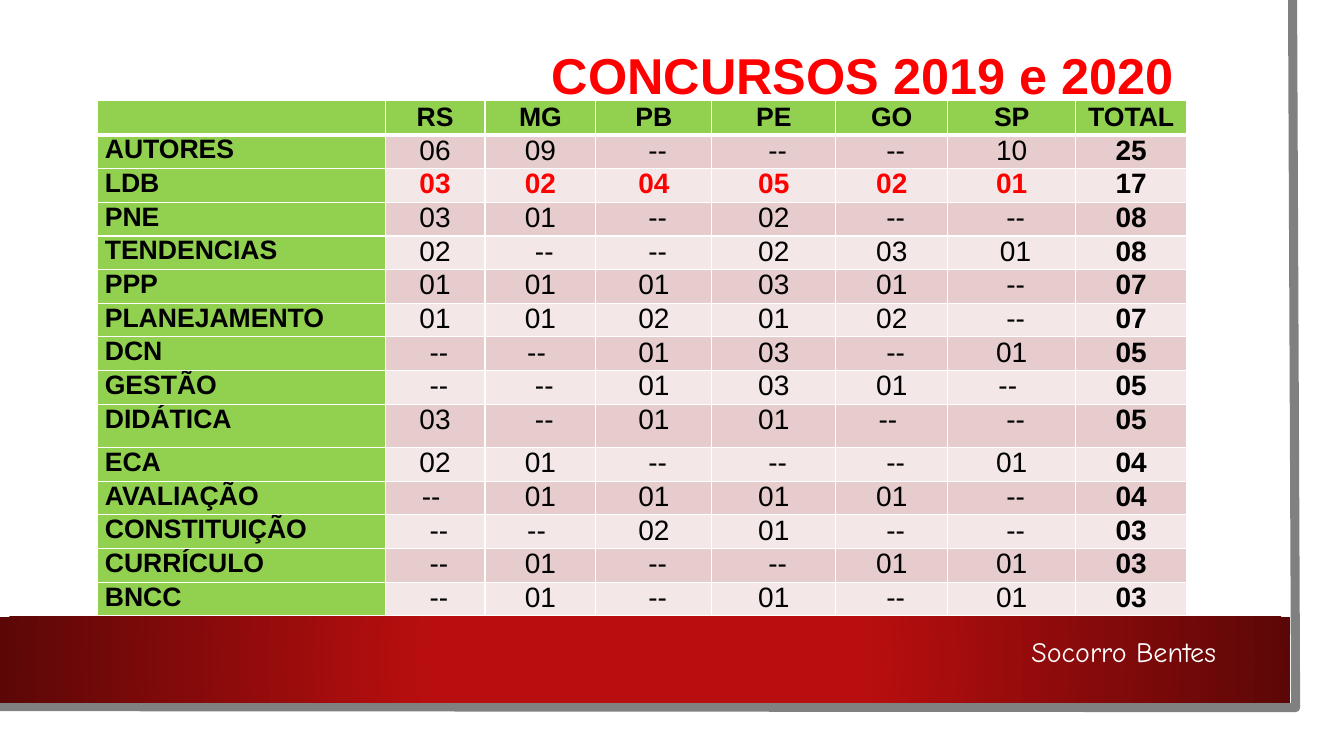
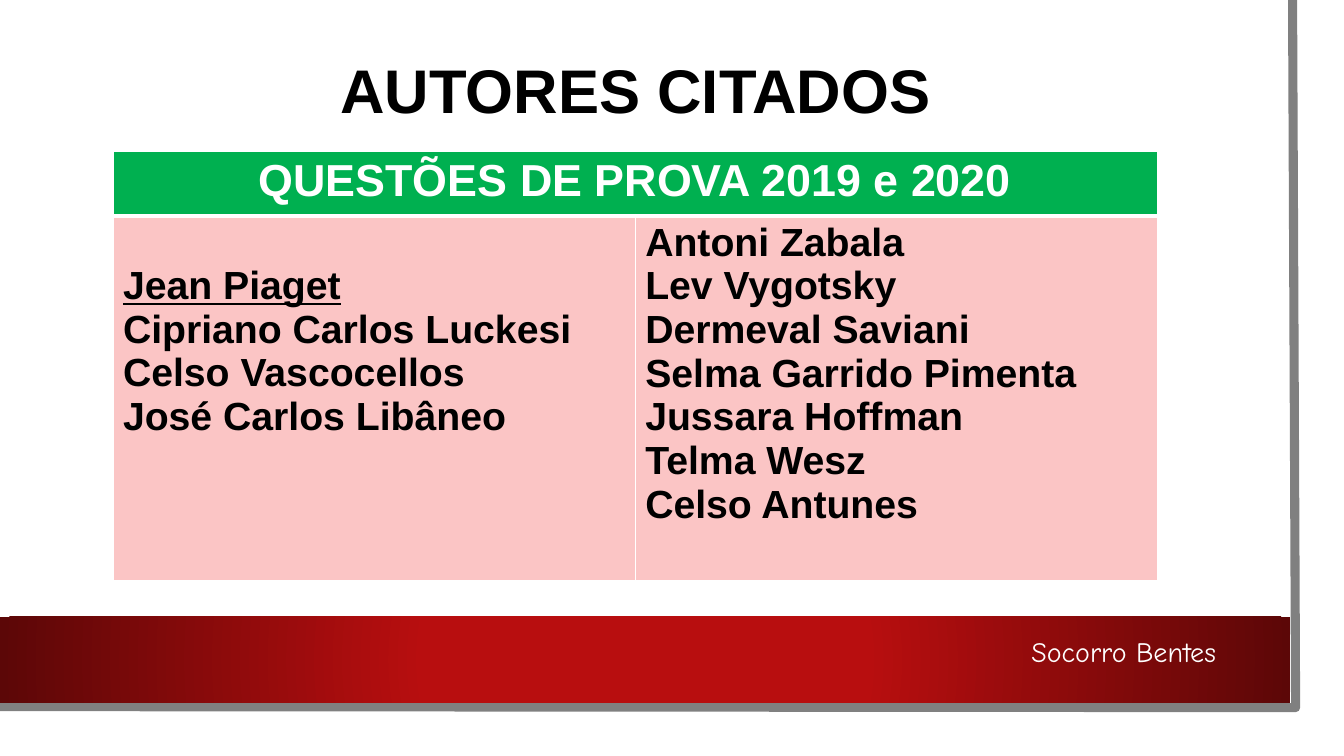
from lxml.etree import SubElement
from pptx import Presentation
from pptx.dml.color import RGBColor
from pptx.enum.shapes import MSO_SHAPE
from pptx.enum.text import MSO_AUTO_SIZE, PP_ALIGN
from pptx.oxml import parse_xml
from pptx.oxml.ns import qn
from pptx.util import Inches, Pt

COLORS = {
    "white": "FFFFFF",
    "black": "000000",
    "red": "FF0000",
    "edge": "808080",
    "band": "B80E0F",
    "band_dark": "5C0707",
    "label": "92D050",
    "row_odd": "E6CCCC",
    "row_even": "F3E7E7",
    "header": "00B050",
    "authors": "FBC5C5",
}
DRAWING_NS = "http://schemas.openxmlformats.org/drawingml/2006/main"

STATES = ["", "RS", "MG", "PB", "PE", "GO", "SP", "TOTAL"]
STATE_WIDTHS = [2.85, 0.99, 1.1, 1.15, 1.23, 1.11, 1.27, 1.1]
TOPICS = [
    "AUTORES,06,09, --, --, --,10,25",
    "LDB,03,02,04,05,02,01,17",
    "PNE,03,01, --,02, --, --,08",
    "TENDENCIAS,02, --, --,02,03, 01,08",
    "PPP,01,01,01,03,01, --,07",
    "PLANEJAMENTO,01,01,02,01,02, --,07",
    "DCN, --,-- ,01,03, --,01,05",
    "GESTÃO, --, --,01,03,01,-- ,05",
    "DIDÁTICA,03, --,01,01,-- , --,05",
    "ECA,02,01, --, --, --,01,04",
    "AVALIAÇÃO,-- ,01,01,01,01, --,04",
    "CONSTITUIÇÃO, --,-- ,02,01, --, --,03",
    "CURRÍCULO, --,01, --, --,01,01,03",
    "BNCC, --,01, --,01, --,01,03",
]
TABLE_HEIGHT, TALL_ROW = 5.1, 0.43

AUTHORS_LEFT = ["Jean Piaget", "Cipriano Carlos Luckesi", "Celso Vascocellos",
                "José Carlos Libâneo"]
AUTHORS_RIGHT = ["Antoni Zabala", "Lev Vygotsky", "Dermeval Saviani",
                 "Selma Garrido Pimenta", "Jussara Hoffman", "Telma Wesz",
                 "Celso Antunes"]


def rgb(name):
    return RGBColor.from_string(COLORS[name])


class Deck:
    """Holds the shared style and the slide being drawn."""

    def __init__(self):
        self.prs = Presentation()
        self.prs.slide_width, self.prs.slide_height = Inches(13.33), Inches(7.5)
        self.slide = None

    def new_slide(self):
        self.slide = self.prs.slides.add_slide(self.prs.slide_layouts[6])
        self.rectangle(0, 0, 13.1, 7.27)
        self.page_edge()
        self.band()
        self.text("Socorro Bentes", 8.01, 6.25, 4.15, 0.45, 20, "white",
                  PP_ALIGN.RIGHT, font="Comic Neue", bold=False)

    def rectangle(self, left, top, width, height):
        shape = self.slide.shapes.add_shape(
            MSO_SHAPE.RECTANGLE, Inches(left), Inches(top), Inches(width), Inches(height))
        shape.shadow.inherit = False
        shape.fill.solid()
        shape.fill.fore_color.rgb = rgb("white")
        shape.line.fill.background()
        return shape

    def page_edge(self):
        """Grey line along the right and lower sides of the page."""
        outline = self.slide.shapes.build_freeform(Inches(12.82), 0)
        outline.add_line_segments(
            [(Inches(12.85), Inches(7.02)), (Inches(-0.03), Inches(7.01))], close=False)
        edge = outline.convert_to_shape()
        edge.shadow.inherit = False
        edge.fill.background()
        edge.line.color.rgb = rgb("edge")
        edge.line.width = Pt(6.5)

    def band(self):
        band = self.rectangle(0, 6.12, 12.8, 0.85)
        solid = band._element.spPr.find(qn("a:solidFill"))
        stops = "".join(
            f'<a:gs pos="{pos}"><a:srgbClr val="{COLORS[name]}"/></a:gs>'
            for pos, name in ((34000, "band"), (100000, "band_dark")))
        solid.getparent().replace(solid, parse_xml(
            f'<a:gradFill xmlns:a="{DRAWING_NS}"><a:gsLst>{stops}</a:gsLst>'
            '<a:path path="circle"><a:fillToRect l="50000" t="50000" r="50000" b="50000"/>'
            '</a:path></a:gradFill>'))

    def set_lines(self, frame, lines, size, color, align, font="Arial", bold=True):
        for index, line in enumerate(lines):
            paragraph = frame.add_paragraph() if index else frame.paragraphs[0]
            paragraph.text = line
            paragraph.alignment = align
            paragraph.font.name = font
            paragraph.font.size = Pt(size)
            paragraph.font.bold = bold
            paragraph.font.color.rgb = rgb(color)

    def text(self, line, left, top, width, height, size, color, align, **style):
        box = self.slide.shapes.add_textbox(
            Inches(left), Inches(top), Inches(width), Inches(height))
        box.text_frame.word_wrap = True
        box.text_frame.auto_size = MSO_AUTO_SIZE.SHAPE_TO_FIT_TEXT
        self.set_lines(box.text_frame, [line], size, color, align, **style)

    def table(self, left, top, widths, heights):
        table = self.slide.shapes.add_table(
            len(heights), len(widths), Inches(left), Inches(top),
            Inches(sum(widths)), Inches(sum(heights))).table
        for column, width in zip(table.columns, widths):
            column.width = Inches(width)
        for row, height in zip(table.rows, heights):
            row.height = Inches(height)
        return table

    def cell(self, cell, lines, size, color, fill, align, bold=True, bottom=1):
        """Fill a table cell and give it white borders; bottom is in points."""
        properties = cell._tc.get_or_add_tcPr()
        for side, width in (("L", 1), ("R", 1), ("T", 1), ("B", bottom)):
            border = SubElement(properties, qn(f"a:ln{side}"), w=str(Pt(width)))
            SubElement(SubElement(border, qn("a:solidFill")), qn("a:srgbClr"),
                       val=COLORS["white"])
        cell.fill.solid()
        cell.fill.fore_color.rgb = rgb(fill)
        self.set_lines(cell.text_frame, lines, size, color, align, bold=bold)


def contests_slide(deck):
    deck.new_slide()
    deck.text("CONCURSOS 2019 e 2020 ", 1.15, 0.39, 10.73, 0.71, 36, "red",
              PP_ALIGN.RIGHT)
    rows = [STATES] + [topic.split(",") for topic in TOPICS]
    row_height = (TABLE_HEIGHT - TALL_ROW) / (len(rows) - 1)
    heights = [TALL_ROW if row[0] == "DIDÁTICA" else row_height for row in rows]
    table = deck.table(0.97, 1, STATE_WIDTHS, heights)
    last = len(STATES) - 1
    for r, row in enumerate(rows):
        for c, value in enumerate(row):
            cell = table.cell(r, c)
            cell.margin_left = cell.margin_right = Inches(0.07)
            cell.margin_top = cell.margin_bottom = 0
            if r == 0:
                deck.cell(cell, [value], 19, "black", "label", PP_ALIGN.CENTER, bottom=3)
                cell.text_frame.paragraphs[0].line_spacing = 1.07
            elif c == 0:
                deck.cell(cell, [value], 19, "black", "label", PP_ALIGN.LEFT)
            else:
                highlighted = row[0] == "LDB" and c < last
                deck.cell(cell, [value], 20, "red" if highlighted else "black",
                          "row_odd" if r % 2 else "row_even", PP_ALIGN.CENTER,
                          bold=highlighted or c == last)


def authors_slide(deck):
    deck.new_slide()
    deck.text("AUTORES CITADOS ", 1.3, 0.47, 10.18, 0.84, 44, "black", PP_ALIGN.CENTER)
    table = deck.table(1.12, 1.5, [5.18, 5.18], [0.64, 3.62])
    heading = table.cell(0, 0)
    heading.merge(table.cell(0, 1))
    deck.cell(heading, ["QUESTÕES DE PROVA 2019 e 2020"], 32, "white", "header",
              PP_ALIGN.CENTER, bottom=3)
    for c, authors in enumerate((AUTHORS_LEFT, AUTHORS_RIGHT)):
        deck.cell(table.cell(1, c), authors, 28, "black", "authors", PP_ALIGN.JUSTIFY)
    first_column = table.cell(1, 0)
    first_column.margin_top = Inches(0.48)
    first_column.text_frame.paragraphs[0].font.underline = True
    for paragraph in table.cell(1, 1).text_frame.paragraphs[-2:]:
        paragraph.alignment = PP_ALIGN.LEFT


def main():
    deck = Deck()
    contests_slide(deck)
    authors_slide(deck)
    deck.prs.save("out.pptx")


if __name__ == "__main__":
    main()
